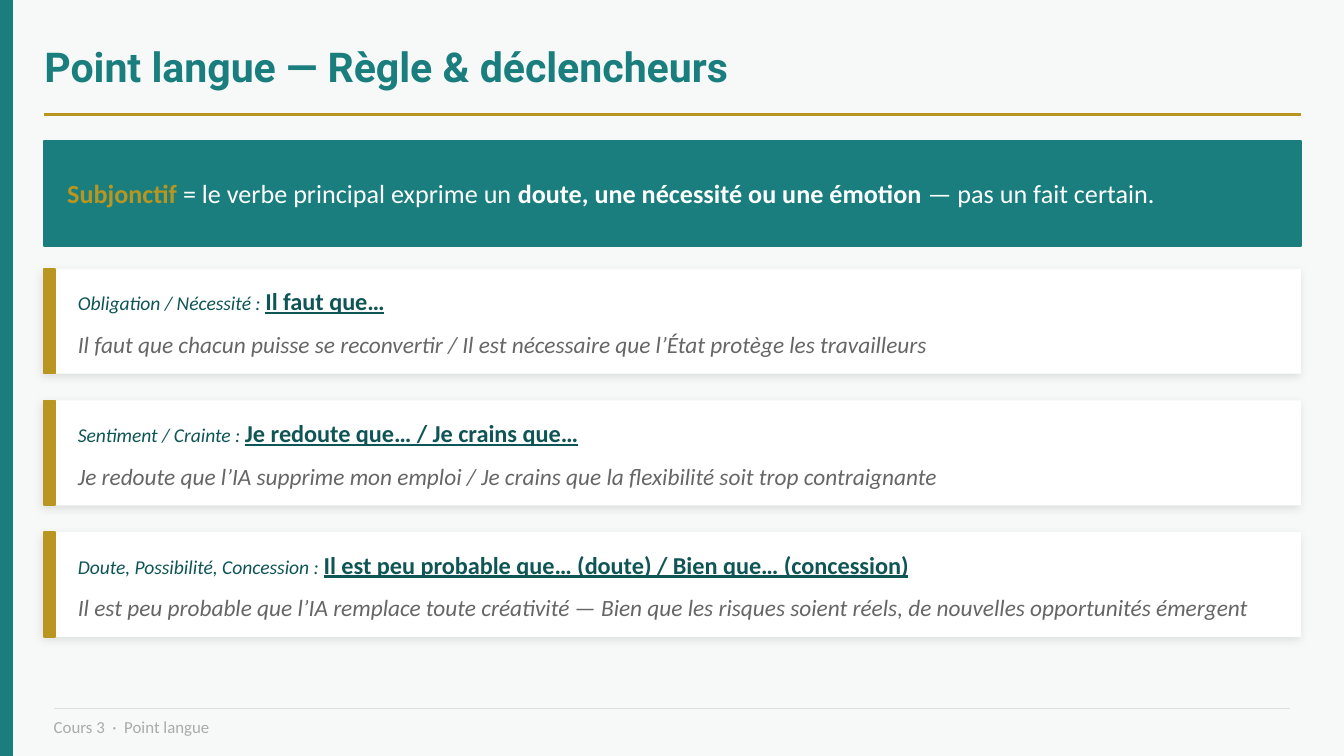
from dataclasses import dataclass
from typing import NamedTuple

from lxml.etree import SubElement
from pptx import Presentation
from pptx.dml.color import RGBColor
from pptx.enum.shapes import MSO_CONNECTOR, MSO_SHAPE
from pptx.enum.text import MSO_ANCHOR
from pptx.oxml.ns import qn
from pptx.util import Inches, Pt


@dataclass(frozen=True)
class Theme:
    back: str = "F7F9F9"
    teal: str = "1A7E7E"
    deep: str = "0F5555"
    gold: str = "B89620"
    white: str = "FFFFFF"
    grey: str = "666666"
    pale: str = "AAAAAA"
    rule: str = "DDDDDD"
    shade: str = "000000"
    head: str = "Roboto"
    body: str = "Calibri"
    title: float = 22
    lead: float = 14
    key: float = 13
    sample: float = 12.5
    label: float = 10.5
    foot: float = 9


class Box(NamedTuple):
    left: float
    top: float
    width: float
    height: float


class Run(NamedTuple):
    text: str
    color: str
    size: float
    bold: bool = False
    italic: bool = False
    under: bool = False


class Card(NamedTuple):
    label: str
    key: str
    sample: str


THEME = Theme()
PAGE_WIDTH = 10
PAGE_HEIGHT = PAGE_WIDTH * 9 / 16
LEFT, WIDTH, HEIGHT = 0.33, 9.35, 0.78
FIRST, STEP = 2.0, 0.98
CARDS = [
    Card(
        "Obligation / Nécessité : ",
        "Il faut que…",
        "Il faut que chacun puisse se reconvertir / "
        "Il est nécessaire que l’État protège les travailleurs",
    ),
    Card(
        "Sentiment / Crainte : ",
        "Je redoute que… / Je crains que…",
        "Je redoute que l’IA supprime mon emploi / "
        "Je crains que la flexibilité soit trop contraignante",
    ),
    Card(
        "Doute, Possibilité, Concession : ",
        "Il est peu probable que… (doute) / Bien que… (concession)",
        "Il est peu probable que l’IA remplace toute créativité — "
        "Bien que les risques soient réels, de nouvelles opportunités émergent",
    ),
]


def add_text(slide, box: Box, *runs: Run, font: str = THEME.body) -> None:
    frame = slide.shapes.add_textbox(*map(Inches, box)).text_frame
    frame.word_wrap = True
    frame.vertical_anchor = MSO_ANCHOR.MIDDLE
    frame.margin_left = frame.margin_right = 0
    frame.margin_top = frame.margin_bottom = 0
    for item in runs:
        run = frame.paragraphs[0].add_run()
        run.text = item.text
        run.font.name = font
        run.font.size = Pt(item.size)
        run.font.color.rgb = RGBColor.from_string(item.color)
        run.font.bold = item.bold
        run.font.italic = item.italic
        run.font.underline = item.under


def add_shadow(shape) -> None:
    effects = shape._element.spPr.find(qn("a:effectLst"))
    shadow = SubElement(
        effects, qn("a:outerShdw"), blurRad=str(Pt(5)), dist=str(Pt(2)),
        dir=str(135 * 60000), algn="bl", rotWithShape="0",
    )
    color = SubElement(shadow, qn("a:srgbClr"), val=THEME.shade)
    SubElement(color, qn("a:alpha"), val="9000")


def add_panel(slide, box: Box, color: str, raised: bool = False) -> None:
    panel = slide.shapes.add_shape(MSO_SHAPE.RECTANGLE, *map(Inches, box))
    panel.shadow.inherit = False
    panel.fill.solid()
    panel.fill.fore_color.rgb = RGBColor.from_string(color)
    if raised:
        panel.line.fill.background()
        add_shadow(panel)
    else:
        panel.line.color.rgb = RGBColor.from_string(color)
        panel.line.width = Pt(1)


def add_rule(slide, left: float, right: float, top: float,
             color: str, weight: float) -> None:
    rule = slide.shapes.add_connector(
        MSO_CONNECTOR.STRAIGHT,
        Inches(left), Inches(top), Inches(right), Inches(top),
    )
    rule.line.color.rgb = RGBColor.from_string(color)
    rule.line.width = Pt(weight)
    SubElement(rule._element.spPr, qn("a:effectLst"))


def add_card(slide, card: Card, top: float) -> None:
    add_panel(slide, Box(LEFT, top, WIDTH, HEIGHT), THEME.white, raised=True)
    add_panel(slide, Box(LEFT, top, 0.08, HEIGHT), THEME.gold)
    add_text(
        slide, Box(0.58, top + 0.1, 8.8, 0.28),
        Run(card.label, THEME.deep, THEME.label, italic=True),
        Run(card.key, THEME.deep, THEME.key, bold=True, under=True),
    )
    add_text(
        slide, Box(0.58, top + 0.42, 8.8, 0.28),
        Run(card.sample, THEME.grey, THEME.sample, italic=True),
    )


def main() -> None:
    deck = Presentation()
    deck.slide_width, deck.slide_height = Inches(PAGE_WIDTH), Inches(PAGE_HEIGHT)
    slide = deck.slides.add_slide(deck.slide_layouts[6])
    slide.background.fill.solid()
    slide.background.fill.fore_color.rgb = RGBColor.from_string(THEME.back)

    add_panel(slide, Box(0, 0, 0.09, PAGE_HEIGHT), THEME.teal)
    add_text(
        slide, Box(LEFT, 0.22, WIDTH, 0.55),
        Run("Point langue — Règle & déclencheurs", THEME.teal, THEME.title, bold=True),
        font=THEME.head,
    )
    add_rule(slide, LEFT, LEFT + WIDTH, 0.85, THEME.gold, 1.5)

    add_panel(slide, Box(LEFT, 1.05, WIDTH, HEIGHT), THEME.teal)
    add_text(
        slide, Box(0.5, 1.05, 9.1, HEIGHT),
        Run("Subjonctif ", THEME.gold, THEME.lead, bold=True),
        Run("= le verbe principal exprime un ", THEME.white, THEME.lead),
        Run("doute, une nécessité ou une émotion", THEME.white, THEME.lead, bold=True),
        Run(" — pas un fait certain.", THEME.white, THEME.lead),
    )

    for index, card in enumerate(CARDS):
        add_card(slide, card, FIRST + index * STEP)

    add_rule(slide, 0.4, 9.6, 5.27, THEME.rule, 0.75)
    add_text(
        slide, Box(0.4, 5.3, 9.2, 0.22),
        Run("Cours 3  ·  Point langue", THEME.pale, THEME.foot),
    )
    deck.save("out.pptx")


if __name__ == "__main__":
    main()
